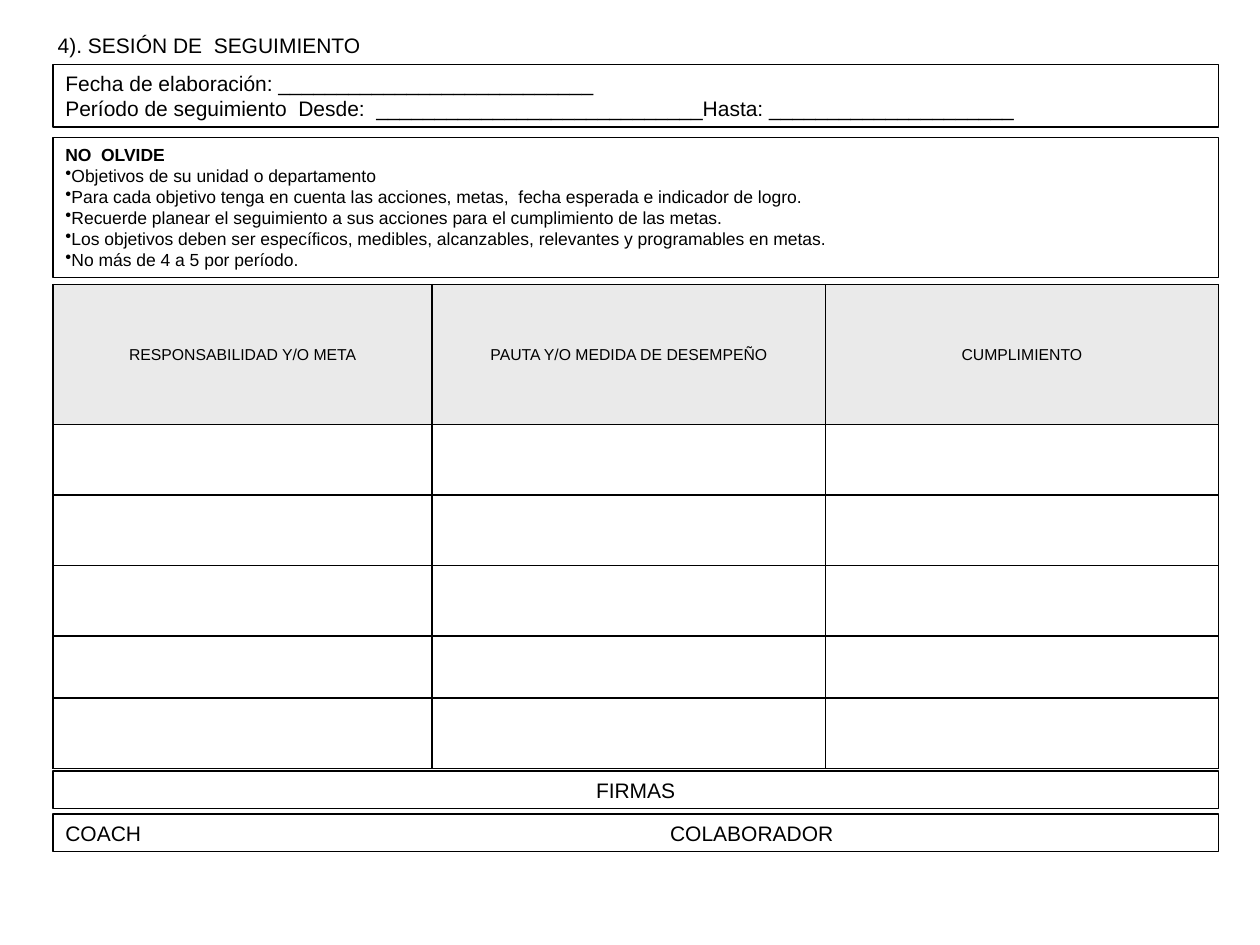
from dataclasses import dataclass

from lxml import etree
from pptx import Presentation
from pptx.dml.color import RGBColor
from pptx.enum.shapes import MSO_SHAPE
from pptx.enum.text import MSO_ANCHOR, PP_ALIGN
from pptx.oxml.ns import qn
from pptx.util import Inches, Pt

RECT = MSO_SHAPE.RECTANGLE
LEFT, CENTER = PP_ALIGN.LEFT, PP_ALIGN.CENTER
MIDDLE = MSO_ANCHOR.MIDDLE
BLACK = RGBColor(0, 0, 0)
WHITE = RGBColor(255, 255, 255)
GRAY = RGBColor(0xEA, 0xEA, 0xEA)
FONT = "Arial"
EDGE, WIDTH = 0.42, 9.25


@dataclass
class Line:
    text: str
    size: float = 12
    bold: bool = False
    bullet: bool = False
    align: PP_ALIGN = LEFT
    tab: float = 0


@dataclass
class Panel:
    top: float
    height: float
    lines: list[Line]


NOTES = [
    "Objetivos de su unidad o departamento",
    "Para cada objetivo tenga en cuenta las acciones, metas,  fecha esperada e indicador de logro.",
    "Recuerde planear el seguimiento a sus acciones para el cumplimiento de las metas.",
    "Los objetivos deben ser específicos, medibles, alcanzables, relevantes y programables en metas.",
    "No más de 4 a 5 por período.",
]
PANELS = [
    Panel(0.51, 0.5, [
        Line("Fecha de elaboración: " + "_" * 27),
        Line("Período de seguimiento  Desde:  " + "_" * 28 + "Hasta: " + "_" * 21),
    ]),
    Panel(1.09, 1.11, [Line("NO  OLVIDE", 10, bold=True)]
          + [Line(note, 10, bullet=True) for note in NOTES]),
    Panel(6.12, 0.3, [Line("FIRMAS", align=CENTER)]),
    Panel(6.46, 0.3, [Line("COACH\tCOLABORADOR", tab=4.8)]),
]
HEADS = ["RESPONSABILIDAD Y/O META", "PAUTA Y/O MEDIDA DE DESEMPEÑO", "CUMPLIMIENTO"]
COLS = [3.01, 3.12, 3.12]
ROWS = [1.11, 0.56, 0.56, 0.56, 0.49, 0.56]


def write(frame, lines: list[Line]) -> None:
    frame.word_wrap = True
    for i, line in enumerate(lines):
        para = frame.paragraphs[0] if i == 0 else frame.add_paragraph()
        para.alignment = line.align
        props = para._p.get_or_add_pPr()
        if line.bullet:
            props.set("marL", "0")
            props.set("indent", "0")
            etree.SubElement(props, qn("a:buChar"), char="•")
        if line.tab:
            tabs = etree.SubElement(props, qn("a:tabLst"))
            etree.SubElement(tabs, qn("a:tab"), pos=str(Inches(line.tab)), algn="l")
        run = para.add_run()
        run.text = line.text
        font = run.font
        font.name, font.size, font.bold = FONT, Pt(line.size), line.bold
        font.color.rgb = BLACK


def draw_panel(slide, panel: Panel) -> None:
    box = slide.shapes.add_shape(
        RECT, Inches(EDGE), Inches(panel.top), Inches(WIDTH), Inches(panel.height))
    box.shadow.inherit = False
    box.fill.background()
    box.line.color.rgb = BLACK
    box.line.width = Pt(0.75)
    box.text_frame.vertical_anchor = MSO_ANCHOR.TOP
    write(box.text_frame, panel.lines)


def add_edges(cell) -> None:
    props = cell._tc.get_or_add_tcPr()
    for side in ("lnL", "lnR", "lnT", "lnB"):
        edge = etree.SubElement(props, qn(f"a:{side}"), w=str(Pt(1)))
        fill = etree.SubElement(edge, qn("a:solidFill"))
        etree.SubElement(fill, qn("a:srgbClr"), val=str(BLACK))


def draw_table(slide) -> None:
    frame = slide.shapes.add_table(
        len(ROWS), len(COLS), Inches(EDGE), Inches(2.26), Inches(WIDTH), Inches(sum(ROWS)))
    table = frame.table
    table.first_row = table.horz_banding = False
    for col, width in zip(table.columns, COLS):
        col.width = Inches(width)
    for row, height in zip(table.rows, ROWS):
        row.height = Inches(height)
    for cell in table.iter_cells():
        add_edges(cell)
        cell.fill.solid()
        cell.fill.fore_color.rgb = WHITE
    for i, head in enumerate(HEADS):
        cell = table.cell(0, i)
        cell.fill.fore_color.rgb = GRAY
        cell.vertical_anchor = MIDDLE
        write(cell.text_frame, [Line(head, 9, align=CENTER)])


def main() -> None:
    deck = Presentation()
    deck.slide_width, deck.slide_height = Inches(10), Inches(7.5)
    slide = deck.slides.add_slide(deck.slide_layouts[6])
    draw_table(slide)
    title = slide.shapes.add_textbox(Inches(0.36), Inches(0.21), Inches(9.3), Inches(0.3))
    write(title.text_frame, [Line("4). SESIÓN DE  SEGUIMIENTO")])
    for panel in PANELS:
        draw_panel(slide, panel)
    deck.save("out.pptx")


if __name__ == "__main__":
    main()
